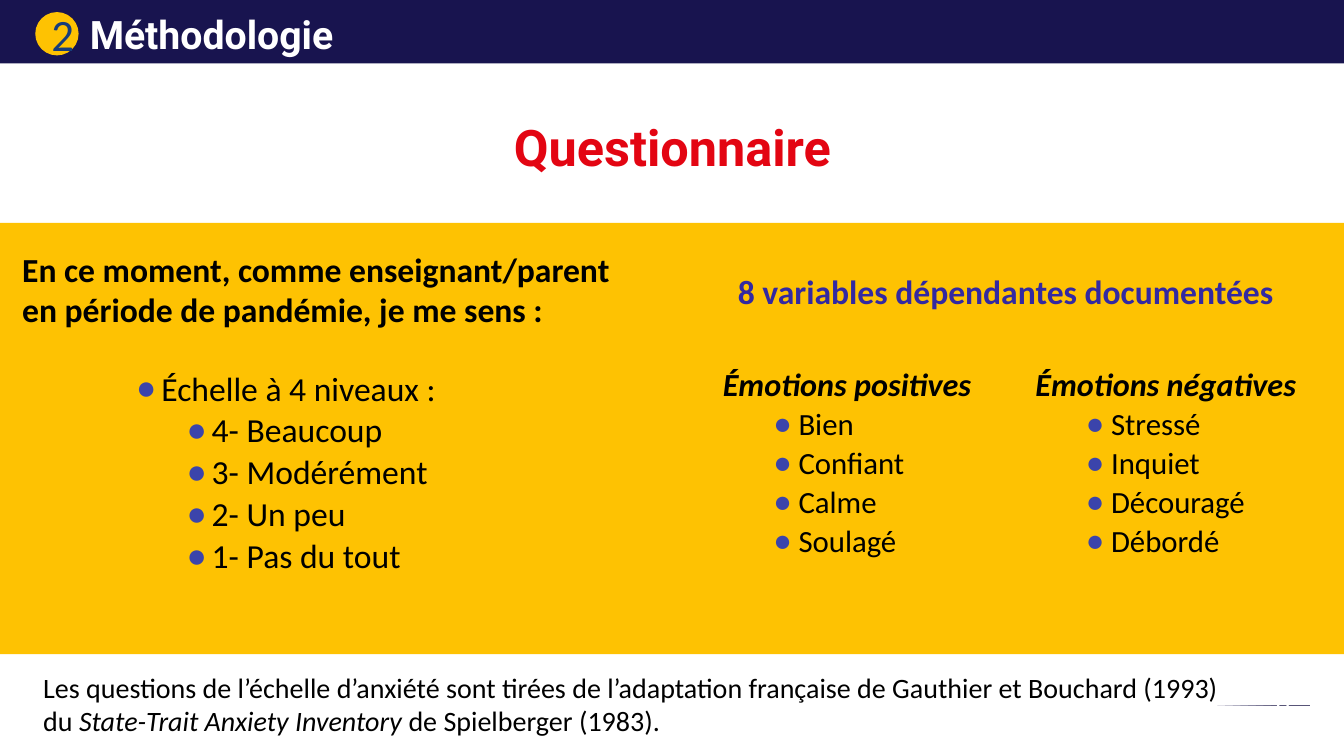
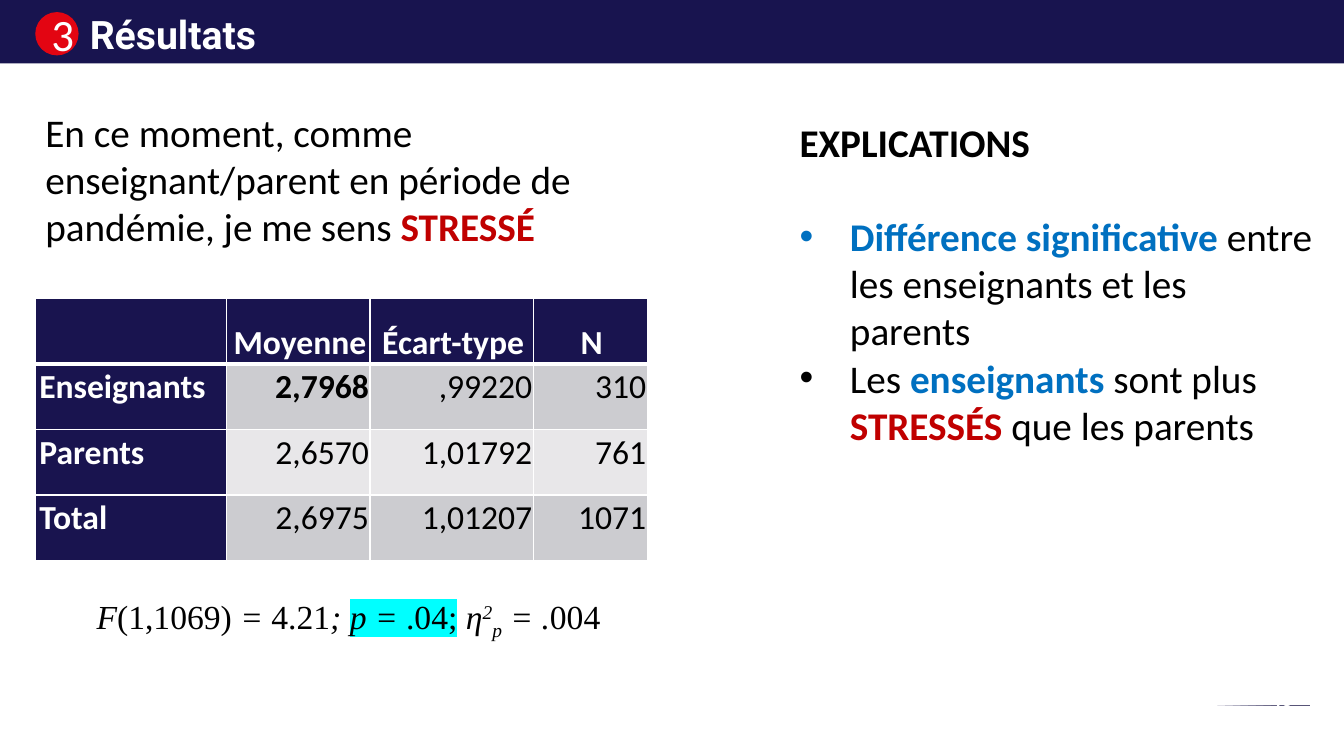
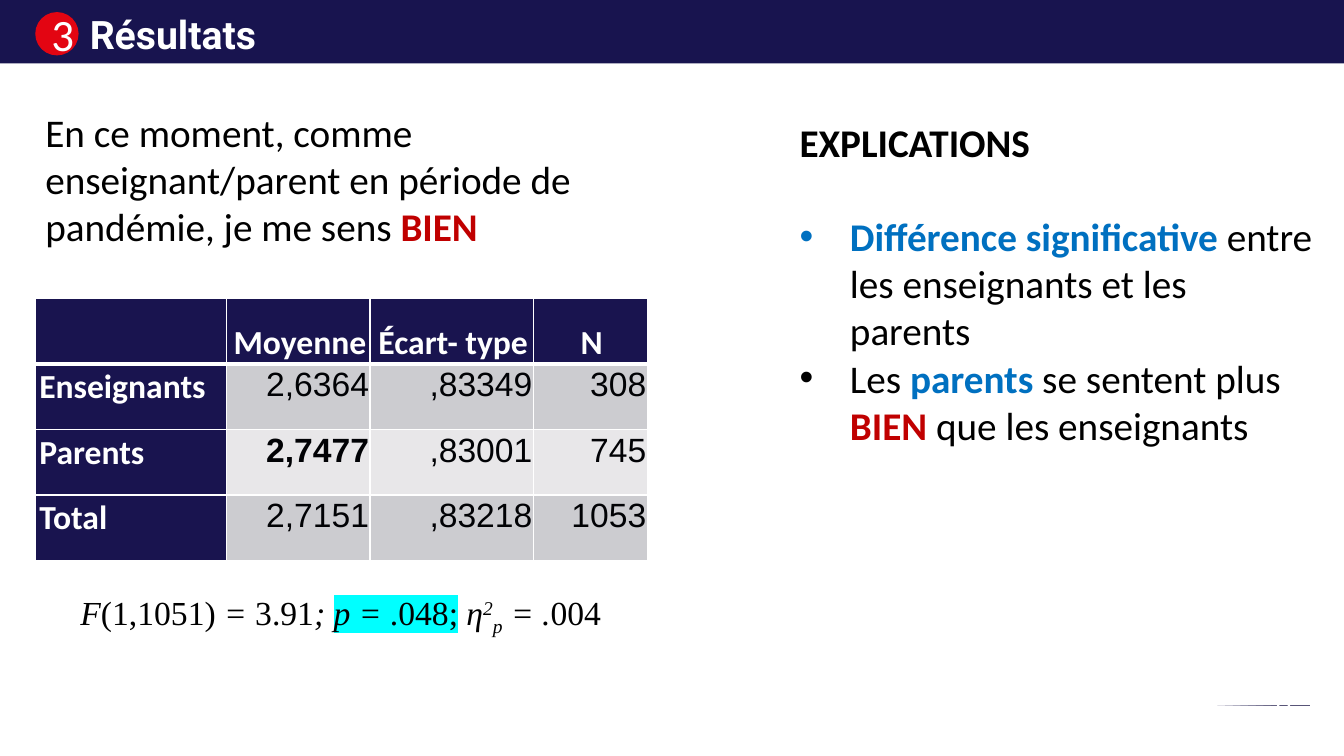
import dataclasses

import lxml.etree
import pptx
import pptx.dml.color
import pptx.enum.shapes
import pptx.enum.text
import pptx.oxml.ns
import pptx.util

Inches = pptx.util.Inches
Pt = pptx.util.Pt
qn = pptx.oxml.ns.qn
ALIGN = pptx.enum.text.PP_ALIGN
ANCHOR = pptx.enum.text.MSO_ANCHOR
SHAPE = pptx.enum.shapes.MSO_SHAPE


@dataclasses.dataclass(frozen=True)
class Theme:
    band: str = "18144F"
    navy: str = "19144F"
    navy_dark: str = "130F3B"
    yellow: str = "FEC202"
    red: str = "E30512"
    dark_red: str = "C00000"
    blue: str = "0070C0"
    violet: str = "3329A1"
    bullet: str = "3B44AB"
    digit: str = "173D7A"
    black: str = "000000"
    ink: str = "010205"
    white: str = "FFFFFF"
    stripe: str = "CCCCD0"
    stripe_light: str = "E8E7E9"
    highlight: str = "00FFFF"
    body: str = "Calibri"
    heading: str = "Roboto"
    math: str = "Times New Roman"
    figures: str = "Arial"
    huge: int = 36
    digit_size: int = 32
    large: int = 28
    medium: int = 24
    column_head: int = 23
    column_item: int = 22
    note: int = 20
    small: int = 12


T = Theme()

BLOB_START = (12.53, 7.1)
BLOB_CURVES = [
    (12.5, 7.07, 12.5, 7.03, 12.49, 7.01),
    (12.49, 7.01, 12.49, 7, 12.48, 6.98),
    (12.48, 6.98, 12.44, 6.93, 12.45, 6.89),
    (12.45, 6.77, 12.53, 6.76, 12.56, 6.75),
    (12.6, 6.73, 12.61, 6.77, 12.68, 6.79),
    (12.75, 6.8, 12.89, 6.75, 12.96, 6.85),
    (13.03, 6.94, 12.99, 7.01, 12.97, 7.06),
    (12.94, 7.1, 12.88, 7.15, 12.83, 7.17),
    (12.78, 7.19, 12.71, 7.19, 12.66, 7.17),
    (12.61, 7.16, 12.56, 7.13, 12.53, 7.1),
]


def rgb(color):
    return pptx.dml.color.RGBColor.from_string(color)


def add_color(parent, tag, color):
    el = lxml.etree.SubElement(parent, qn(tag))
    lxml.etree.SubElement(el, qn("a:srgbClr")).set("val", color)
    return el


def format_run(r, size=T.medium, font=T.body, color=T.black, bold=False,
               italic=False, highlight=None, base=0):
    r.font.size = Pt(size)
    r.font.name = font
    r.font.bold = bold
    r.font.italic = italic
    r.font.color.rgb = rgb(color)
    rPr = r.font._element
    if highlight:
        rPr.find(qn("a:solidFill")).addnext(add_color(rPr, "a:highlight", highlight))
    if base:
        rPr.set("baseline", str(base * 1000))


def add_text(tf, runs, align=ALIGN.LEFT, level=0, left=0, hang=0, bullet=None,
             bullet_color=T.black, line=1.0, before=0, after=0, **fmt):
    p = tf.paragraphs[0]
    if p.runs:
        p = tf.add_paragraph()
    p.alignment = align
    p.level = level
    p.line_spacing = line
    p.space_before = Pt(before)
    p.space_after = Pt(after)
    pPr = p._p.get_or_add_pPr()
    pPr.set("marL", str(Inches(left)))
    pPr.set("indent", str(Inches(-hang)))
    if bullet:
        add_color(pPr, "a:buClr", bullet_color)
        lxml.etree.SubElement(pPr, qn("a:buFont")).set("typeface", "Arial")
        lxml.etree.SubElement(pPr, qn("a:buChar")).set("char", bullet)
    else:
        lxml.etree.SubElement(pPr, qn("a:buNone"))
    for item in [runs] if isinstance(runs, str) else runs:
        text, own = (item, {}) if isinstance(item, str) else item
        if text == "\n":
            p.add_line_break()
            continue
        r = p.add_run()
        r.text = text
        format_run(r, **{**fmt, **own})


def place(sp, left, top, width, height):
    sp.left, sp.top = Inches(left), Inches(top)
    sp.width, sp.height = Inches(width), Inches(height)
    tf = sp.text_frame
    tf.word_wrap = True
    tf.auto_size = pptx.enum.text.MSO_AUTO_SIZE.NONE
    tf.vertical_anchor = ANCHOR.TOP
    return tf


def add_box(slide, left, top, width, height):
    sp = slide.shapes.add_textbox(0, 0, 0, 0)
    return place(sp, left, top, width, height)


def add_solid(slide, kind, color, left, top, width, height):
    sp = slide.shapes.add_shape(kind, Inches(left), Inches(top), Inches(width), Inches(height))
    sp.shadow.inherit = False
    sp.fill.solid()
    sp.fill.fore_color.rgb = rgb(color)
    sp.line.fill.background()
    return sp


def blob_points(steps=8):
    start = BLOB_START
    for x1, y1, x2, y2, x3, y3 in BLOB_CURVES:
        for i in range(1, steps + 1):
            t = i / steps
            u = 1 - t
            yield tuple(u**3 * a + 3 * u * u * t * b + 3 * u * t * t * c + t**3 * d
                        for a, b, c, d in zip(start, (x1, y1), (x2, y2), (x3, y3)))
        start = (x3, y3)


def add_blob(slide):
    builder = slide.shapes.build_freeform(*BLOB_START, scale=Inches(1))
    builder.add_line_segments(list(blob_points()), close=True)
    sp = builder.convert_to_shape()
    sp.shadow.inherit = False
    sp.line.fill.background()
    sp.fill.gradient()
    sp.fill.gradient_angle = 35
    for stop, color, pos in zip(sp.fill.gradient_stops, (T.navy, T.navy_dark), (0, 0.76)):
        stop.color.rgb = rgb(color)
        stop.position = pos
    return sp


def decorate_master(prs, slide):
    band = add_solid(slide, SHAPE.RECTANGLE, T.band, 0, 0, 13.33, 0.63)
    for shape_id, sp in enumerate((band, add_blob(slide)), 100):
        sp._element.nvSpPr.cNvPr.set("id", str(shape_id))
        prs.slide_master.shapes._spTree.append(sp._element)


def add_slide(prs, layout, title, section, page, disc, digit):
    slide = prs.slides.add_slide(prs.slide_layouts.get_by_name(layout))
    tf = place(slide.shapes.title, 0.79, 0.05, 10.13, 0.57)
    add_text(tf, title, size=T.large, font=T.heading, color=T.white, bold=True)
    sp = add_solid(slide, SHAPE.OVAL, disc, 0.35, 0.12, 0.43, 0.43)
    add_text(sp.text_frame, section, align=ALIGN.CENTER, size=T.digit_size, color=digit)
    add_text(add_box(slide, 12.38, 6.79, 0.68, 0.3), page, align=ALIGN.CENTER,
             size=T.small, font=T.heading, color=T.white, bold=True)
    return slide


def add_list(tf, head, items, size, head_format):
    spacing = dict(line=0.9, after=2)
    dot = dict(bullet="●", bullet_color=T.bullet, hang=0.25)
    if head_format.pop("dotted", False):
        head_format.update(dot, left=0.25)
    add_text(tf, head, **spacing, **head_format)
    for item in items:
        add_text(tf, item, level=1, left=0.75, before=2, size=size, **spacing, **dot)


def set_borders(cell, top, bottom):
    tcPr = cell._tc.get_or_add_tcPr()
    for side, width in (("L", 1), ("R", 1), ("T", top), ("B", bottom)):
        ln = add_color(tcPr, "a:ln" + side, T.white)
        ln.set("w", str(Pt(width)))
        fill = lxml.etree.SubElement(ln, qn("a:solidFill"))
        fill.append(ln[0])


def add_stats_table(slide, rows, best, **figures):
    widths = (1.9, 1.42, 1.62, 1.13)
    frame = slide.shapes.add_table(len(rows), len(widths), Inches(0.35), Inches(2.96),
                                   Inches(sum(widths)), Inches(0.65 * len(rows)))
    table = frame.table
    table.first_row = table.horz_banding = False
    for column, width in zip(table.columns, widths):
        column.width = Inches(width)
    for i, row in enumerate(rows):
        for j, text in enumerate(row):
            cell = table.cell(i, j)
            label = i == 0 or j == 0
            set_borders(cell, 3 if i == 1 else 1, 3 if i == 0 else 1)
            cell.fill.solid()
            stripe = T.stripe if i % 2 else T.stripe_light
            cell.fill.fore_color.rgb = rgb(T.navy if label else stripe)
            cell.margin_left = cell.margin_right = Inches(0.01)
            cell.margin_top = cell.margin_bottom = 0
            cell.vertical_anchor = ANCHOR.BOTTOM if i == 0 else ANCHOR.TOP
            if not text:
                continue
            if label:
                fmt = dict(color=T.white, bold=True)
            else:
                fmt = dict(figures, bold=text == best)
            align = ALIGN.CENTER if i == 0 else ALIGN.RIGHT if j else ALIGN.LEFT
            add_text(cell.text_frame, text, align=align, left=0.03, line=1.07, after=0.8, **fmt)


def add_statistic(slide, left, top, degrees, f_value, p_value):
    upright = dict(italic=False)
    marked = dict(highlight=T.highlight)
    add_text(add_box(slide, left, top, 5.5, 0.81),
             ["F", (f"({degrees}) ", upright), "=", (f" {f_value}", upright), "; ",
              ("p = ", marked), (f"{p_value};", dict(marked, **upright)), " η",
              ("2", dict(base=30)), ("p", dict(base=-25)), " = .", ("004", upright)],
             font=T.math, italic=True)


def questionnaire_slide(prs):
    slide = add_slide(prs, "Comparison", "Méthodologie", "2", "11", T.yellow, T.digit)
    decorate_master(prs, slide)
    panel = add_solid(slide, SHAPE.RECTANGLE, T.yellow, 0, 2.21, 13.33, 4.28)
    slide.shapes._spTree.insert(2, panel._element)
    question, scale, positive, negative = list(slide.placeholders)[1:]
    add_text(add_box(slide, 4.87, 1.1, 3.6, 0.71), "Questionnaire", align=ALIGN.CENTER,
             size=T.huge, font=T.heading, color=T.red, bold=True)
    add_text(place(question, 0.12, 2.42, 6.21, 0.91),
             "En ce moment, comme enseignant/parent en période de pandémie, je me sens :",
             bold=True)
    add_list(place(scale, 1.25, 3.64, 5.08, 2.53), "Échelle à 4 niveaux :",
             ["4- Beaucoup", "3- Modérément", "2- Un peu", "1- Pas du tout"],
             T.medium, dict(dotted=True))
    add_text(add_box(slide, 7.22, 2.64, 5.66, 0.94), "8 variables dépendantes documentées",
             color=T.violet, bold=True)
    columns = [
        (positive, 7.07, "Émotions positives", ["Bien", "Confiant", "Calme", "Soulagé"]),
        (negative, 10.17, "Émotions négatives", ["Stressé", "Inquiet", "Découragé", "Débordé"]),
    ]
    for sp, left, head, items in columns:
        add_list(place(sp, left, 3.61, 2.97, 2.52), head, items, T.column_item,
                 dict(size=T.column_head, bold=True, italic=True))
    add_text(add_box(slide, 0.33, 6.6, 11.98, 0.85),
             ["Les questions de l’échelle d’anxiété sont tirées de l’adaptation française "
              "de Gauthier et Bouchard (1993)", "\n", "du ",
              ("State-Trait Anxiety Inventory ", dict(italic=True)),
              "de Spielberger (1983)."], size=T.note)


def result_slide(prs, page, feeling, rows, best, finding, statistic, **figures):
    slide = add_slide(prs, "Two Content", "Résultats", "3", page, T.red, T.white)
    _, question, notes = slide.placeholders
    red = dict(color=T.dark_red, bold=True)
    blue = dict(color=T.blue, bold=True)
    add_text(place(question, 0.35, 1.02, 6.06, 1.82),
             ["En ce moment, comme enseignant/parent en période de pandémie, je me sens ",
              (feeling, red)], size=T.large)
    add_stats_table(slide, rows, best, **figures)
    add_statistic(slide, *statistic)
    tf = place(notes, 7.83, 1.12, 5.31, 4.17)
    dot = dict(bullet="•", left=0.5, hang=0.5, size=T.large)
    add_text(tf, "EXPLICATIONS", size=T.large, bold=True)
    add_text(tf, [("Différence significative ", blue), "entre les enseignants et les parents"],
             before=34, bullet_color=T.blue, **dot)
    group, verb, emotion, others = finding
    add_text(tf, ["Les ", (group, blue), f" {verb} plus ", (emotion, red),
                  f" que les {others}"], **dot)


def main():
    prs = pptx.Presentation()
    prs.slide_width, prs.slide_height = Inches(13.33), Inches(7.5)
    questionnaire_slide(prs)
    result_slide(
        prs, "13", "STRESSÉ",
        [("", "Moyenne", "Écart-type", "N"),
         ("Enseignants", "2,7968", ",99220", "310"),
         ("Parents", "2,6570", "1,01792", "761"),
         ("Total", "2,6975", "1,01207", "1071")],
        "2,7968", ("enseignants", "sont", "STRESSÉS", "parents"),
        (0.86, 5.86, "1,1069", "4.21", ".04"))
    result_slide(
        prs, "14", "BIEN",
        [("", "Moyenne", "Écart- type", "N"),
         ("Enseignants", "2,6364", ",83349", "308"),
         ("Parents", "2,7477", ",83001", "745"),
         ("Total", "2,7151", ",83218", "1053")],
        "2,7477", ("parents", "se sentent", "BIEN", "enseignants"),
        (0.7, 5.82, "1,1051", "3.91", ".048"), font=T.figures, color=T.ink)
    prs.save("out.pptx")


if __name__ == "__main__":
    main()
